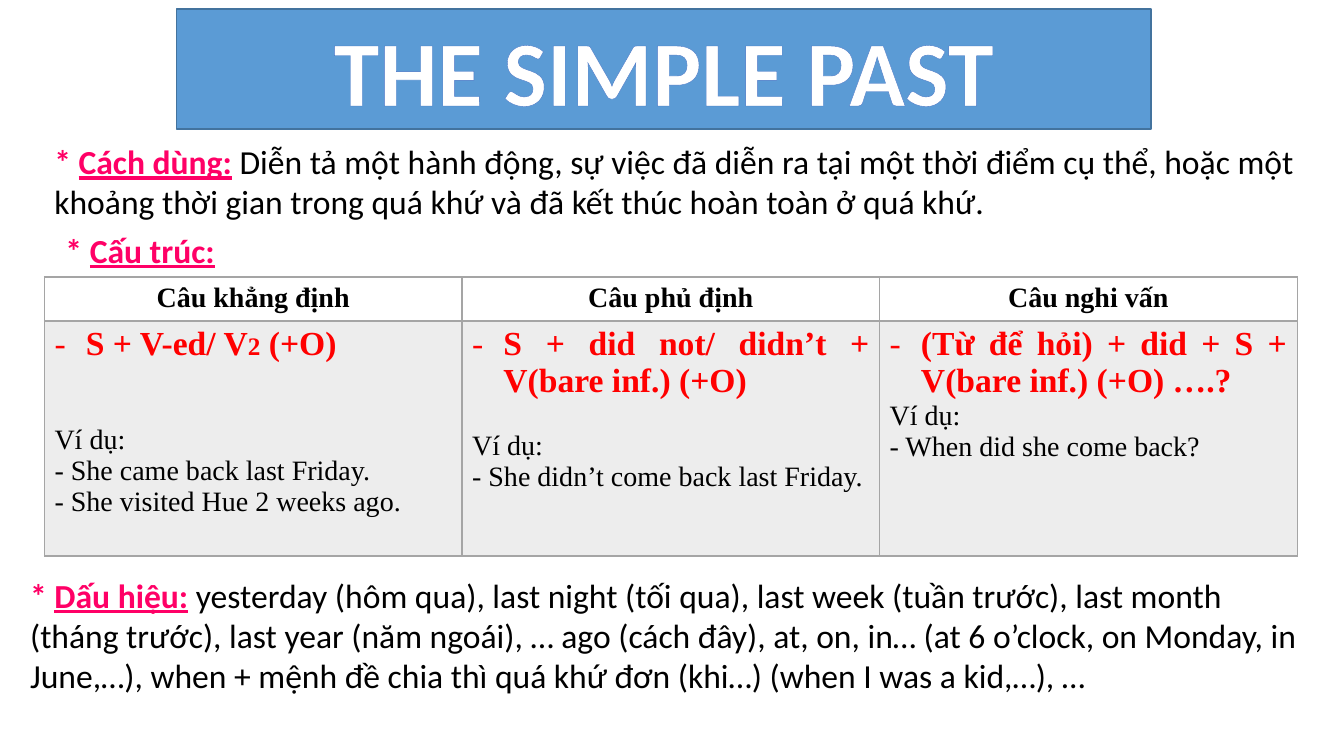
from dataclasses import dataclass

from lxml import etree
from pptx import Presentation
from pptx import util as u
from pptx.dml.color import RGBColor
from pptx.enum import shapes, text
from pptx.oxml import ns


@dataclass(frozen=True)
class Theme:
    body_font: str = "Calibri"
    table_font: str = "Times New Roman"
    black: str = "000000"
    white: str = "FFFFFF"
    pink: str = "FF0066"
    red: str = "FF0000"
    grey: str = "A5A5A5"
    banner: str = "5B9BD5"
    banner_line: str = "43739E"
    outline: str = "4472C4"
    title_size: float = 66
    body_size: float = 24
    cell_size: float = 20
    index_size: float = 18


def sub(parent, tag, **attrs):
    return etree.SubElement(parent, ns.qn(tag), attrs)


class SlideBuilder:
    def __init__(self, prs, theme):
        self.t = theme
        self.s = prs.slides.add_slide(prs.slide_layouts[6])

    def run(self, p, words, size, color, font, bold=False, underline=None):
        r = p.add_run()
        r.text = words
        f = r.font
        f.size, f.name, f.bold, f.underline = u.Pt(size), font, bold, underline
        f.color.rgb = RGBColor.from_string(color)
        return r

    def banner(self, words, *box):
        t = self.t
        sp = self.s.shapes.add_shape(shapes.MSO_SHAPE.RECTANGLE, *map(u.Cm, box))
        sp.shadow.inherit = False
        sp.fill.solid()
        sp.fill.fore_color.rgb = RGBColor.from_string(t.banner)
        sp.line.color.rgb = RGBColor.from_string(t.banner_line)
        sp.line.width = u.Pt(1)
        tf = sp.text_frame
        tf.vertical_anchor = text.MSO_ANCHOR.MIDDLE
        p = tf.paragraphs[0]
        p.alignment = text.PP_ALIGN.CENTER
        r = self.run(p, words, t.title_size, t.white, t.body_font, True)
        # Thin outline around the letters
        ln = etree.Element(ns.qn("a:ln"), w=str(u.Pt(0.8)))
        sub(sub(ln, "a:solidFill"), "a:srgbClr", val=t.outline)
        r.font._element.insert(0, ln)

    def note(self, heading, body, *box):
        t = self.t
        tf = self.s.shapes.add_textbox(*map(u.Cm, box)).text_frame
        tf.word_wrap = True
        tf.auto_size = text.MSO_AUTO_SIZE.SHAPE_TO_FIT_TEXT
        p = tf.paragraphs[0]
        self.run(p, "* ", t.body_size, t.pink, t.body_font, True)
        self.run(p, heading, t.body_size, t.pink, t.body_font, True, True)
        if body:
            self.run(p, " " + body, t.body_size, t.black, t.body_font)

    def borders(self, cell, top, bottom):
        tcPr = cell._tc.get_or_add_tcPr()
        for side, width in (("L", 1), ("R", 1), ("T", top), ("B", bottom)):
            ln = sub(tcPr, "a:ln" + side, w=str(u.Pt(width)))
            sub(sub(ln, "a:solidFill"), "a:srgbClr", val=self.t.grey)

    def header_cell(self, cell, words):
        t = self.t
        self.borders(cell, 1, 2)
        cell.fill.background()
        p = cell.text_frame.paragraphs[0]
        p.alignment = text.PP_ALIGN.CENTER
        self.run(p, words, t.cell_size, t.black, t.table_font, True)

    def formula_cell(self, cell, formula, gap, examples):
        t = self.t
        self.borders(cell, 2, 1)
        cell.fill.solid()
        cell.fill.fore_color.rgb = RGBColor.from_string(t.grey)
        color = cell._tc.tcPr.find(".//" + ns.qn("a:srgbClr") + "[last()]")
        color = cell._tc.tcPr.find(ns.qn("a:solidFill")).find(ns.qn("a:srgbClr"))
        sub(color, "a:alpha", val="20000")
        tf = cell.text_frame
        # Formula with a hanging dash
        p = tf.paragraphs[0]
        p.alignment = text.PP_ALIGN.JUSTIFY
        pPr = p._p.get_or_add_pPr()
        indent = u.Cm(0.79)
        pPr.set("marL", str(indent))
        pPr.set("indent", str(-indent))
        sub(pPr, "a:buFont", typeface=t.table_font)
        sub(pPr, "a:buChar", char="-")
        for words, size in formula:
            self.run(p, words, size, t.red, t.table_font, True)
        # Examples
        for i, words in enumerate(["Ví dụ:"] + examples):
            p = tf.add_paragraph()
            p.alignment = text.PP_ALIGN.JUSTIFY
            if i == 0:
                p.space_before = u.Pt(gap)
            self.run(p, words, t.cell_size, t.black, t.table_font)

    def table(self, columns, heights, left, top, width):
        frame = self.s.shapes.add_table(
            2, len(columns), *map(u.Cm, (left, top, width, sum(heights))))
        tbl = frame.table
        tbl.first_row = tbl.horz_banding = False
        for row, height in zip(tbl.rows, heights):
            row.height = u.Cm(height)
        for i, (header, *content) in enumerate(columns):
            tbl.columns[i].width = u.Cm(width / len(columns))
            self.header_cell(tbl.cell(0, i), header)
            self.formula_cell(tbl.cell(1, i), *content)


def main():
    prs = Presentation()
    prs.slide_width, prs.slide_height = u.Cm(33.87), u.Cm(19.05)
    t = Theme()
    b = SlideBuilder(prs, t)

    # Usage, signal words and structure headings
    b.note("Cách dùng:",
           "Diễn tả một hành động, sự việc đã diễn ra tại một thời điểm cụ thể, "
           "hoặc một khoảng thời gian trong quá khứ và đã kết thúc hoàn toàn ở quá khứ.",
           1.12, 3.43, 32.16, 2.31)
    b.note("Dấu hiệu:",
           "yesterday (hôm qua), last night (tối qua), last week (tuần trước), "
           "last month (tháng trước), last year (năm ngoái), … ago (cách đây), "
           "at, on, in… (at 6 o’clock, on Monday, in June,…), when + mệnh đề chia "
           "thì quá khứ đơn (khi…) (when I was a kid,…), …",
           0.51, 14.35, 32.74, 5.38)
    b.note("Cấu trúc:", "", 1.4, 5.66, 16.94, 1.27)

    # Structure table: header, formula, gap before examples, examples
    big = t.body_size
    b.table([
        ("Câu khẳng định",
         [("S + V-ed/ V", big), ("2", t.index_size), (" (+O)", big)], 44,
         ["- She came back last Friday.", "- She visited Hue 2 weeks ago."]),
        ("Câu phủ định", [("S + did not/ didn’t + V(bare inf.) (+O)", big)], 22,
         ["- She didn’t come back last Friday."]),
        ("Câu nghi vấn", [("(Từ để hỏi) + did + S + V(bare inf.) (+O) ….?", big)], 0,
         ["- When did she come back?"]),
    ], (1.1, 5.93), 1.12, 6.98, 31.57)

    # Title banner
    b.banner("THE SIMPLE PAST", 4.45, 0.23, 24.56, 3.02)
    prs.save("out.pptx")


if __name__ == "__main__":
    main()
